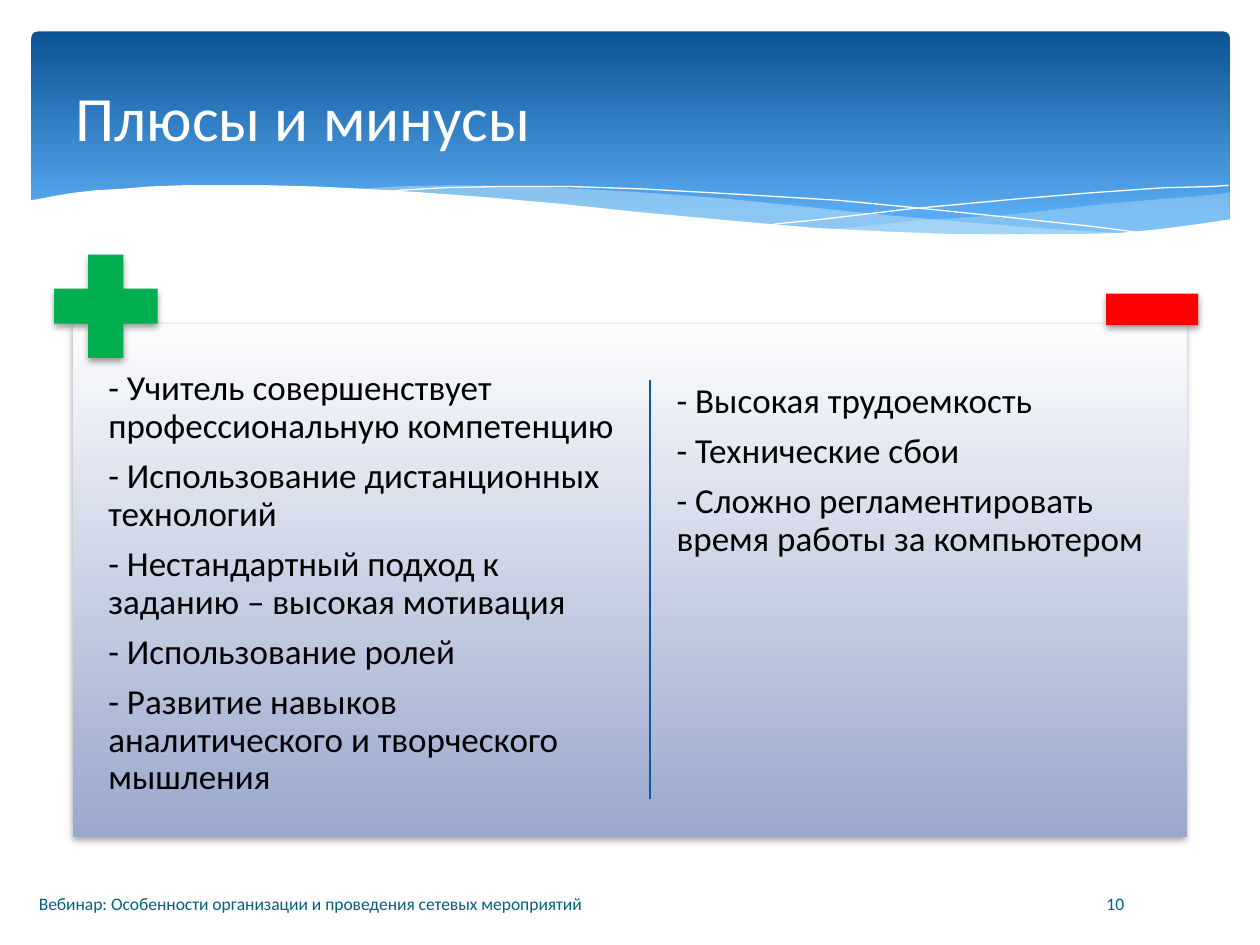
from dataclasses import dataclass

from lxml.etree import SubElement
from pptx import Presentation
from pptx.dml.color import RGBColor
from pptx.enum.shapes import MSO_CONNECTOR, MSO_SHAPE
from pptx.enum.text import MSO_ANCHOR, PP_ALIGN
from pptx.oxml.ns import qn
from pptx.util import Inches, Pt

CELL = Inches(0.01)
COLUMNS, ROWS = 1000, 750
FONT = "Calibri"

RIGHT_SWELL = [
    (950, 128), (923, 131), (896, 133), (851, 137), (780, 145), (704, 150),
    (636, 157), (680, 159), (732, 161), (786, 162), (840, 162), (886, 160),
    (928, 156), (951, 149), (951, 128),
]
LONG_SWELL = [
    (868, 160), (812, 157), (750, 152), (681, 146), (604, 138), (544, 132),
    (489, 128), (440, 125), (395, 123), (336, 122), (288, 123), (261, 125),
    (317, 128), (379, 134), (424, 138), (505, 146), (576, 153), (640, 157),
    (697, 160), (748, 162), (793, 163), (843, 162),
]
FALLING_CREST = [
    (284, 127), (293, 126), (328, 124), (376, 123), (425, 123), (485, 125),
    (557, 129), (640, 134), (702, 140), (770, 147), (844, 155), (882, 160),
]
RISING_CREST = [
    (588, 153), (628, 149), (695, 141), (781, 133), (841, 128), (899, 124),
    (938, 123), (950, 122),
]
WHITE_WAVE = [
    (952, 149), (925, 153), (895, 157), (862, 160), (825, 161), (784, 162),
    (736, 161), (683, 159), (623, 156), (554, 150), (478, 143), (422, 137),
    (366, 132), (315, 128), (267, 125), (225, 123), (186, 122), (152, 122),
    (121, 122), (94, 123), (70, 125), (51, 126), (34, 128), (21, 130),
    (11, 132), (0, 134), (-2, 134), (-2, 185), (952, 185),
]
PLUSES = [
    "- Учитель совершенствует профессиональную компетенцию",
    "- Использование дистанционных технологий",
    "- Нестандартный подход к заданию – высокая мотивация",
    "- Использование ролей",
    "- Развитие навыков аналитического и творческого мышления",
]
MINUSES = [
    "- Высокая трудоемкость",
    "- Технические сбои",
    "- Сложно регламентировать время работы за компьютером",
]


@dataclass
class Box:
    left: float
    top: float
    width: float
    height: float

    def inner(self, left, top, width, height):
        return Box(self.left + left, self.top + top, width, height)

    def point(self, column, row):
        return int((self.left + column) * CELL), int((self.top + row) * CELL)

    def frame(self):
        return *self.point(0, 0), int(self.width * CELL), int(self.height * CELL)


def color(value):
    return RGBColor.from_string(value)


def paint(shape, value, opacity=100):
    shape.fill.solid()
    shape.fill.fore_color.rgb = color(value)
    if opacity < 100:
        fill_color = shape._element.spPr.find(qn("a:solidFill"))[0]
        SubElement(fill_color, qn("a:alpha"), val=str(opacity * 1000))


def paint_gradient(shape, first, last, end=1.0):
    shape.fill.gradient()
    shape.fill.gradient_angle = 270
    for stop, value, position in zip(shape.fill.gradient_stops, (first, last), (0, end)):
        stop.color.rgb = color(value)
        stop.position = position


def add_plain_shape(slide, kind, box):
    shape = slide.shapes.add_shape(kind, *box.frame())
    shape.shadow.inherit = False
    shape.line.fill.background()
    return shape


def add_shadow(shape):
    effects = shape._element.spPr.find(qn("a:effectLst"))
    shadow = SubElement(
        effects, qn("a:outerShdw"), blurRad=str(Pt(4)), dist=str(Pt(2)),
        dir="5400000", rotWithShape="0",
    )
    shadow_color = SubElement(shadow, qn("a:srgbClr"), val="000000")
    SubElement(shadow_color, qn("a:alpha"), val="38000")


def add_wave(slide, box, points, closed=True):
    start, *others = [box.point(*point) for point in points]
    builder = slide.shapes.build_freeform(*start)
    builder.add_line_segments(others, close=closed)
    wave = builder.convert_to_shape()
    wave.shadow.inherit = False
    wave.line.fill.background()
    return wave


def add_text(slide, box, lines, size, value, anchor=MSO_ANCHOR.TOP,
             alignment=PP_ALIGN.LEFT, inset=None, line_spacing=None, space_after=None):
    frame = slide.shapes.add_textbox(*box.frame()).text_frame
    frame.word_wrap = True
    frame.vertical_anchor = anchor
    if inset is not None:
        frame.margin_left = frame.margin_right = inset
        frame.margin_top = frame.margin_bottom = inset
    for index, line in enumerate(lines):
        paragraph = frame.add_paragraph() if index else frame.paragraphs[0]
        paragraph.alignment = alignment
        paragraph.line_spacing = line_spacing
        paragraph.space_after = space_after
        run = paragraph.add_run()
        run.text = line
        run.font.name = FONT
        run.font.size = Pt(size)
        run.font.color.rgb = color(value)


def add_banner(slide, box):
    banner = add_plain_shape(slide, MSO_SHAPE.ROUNDED_RECTANGLE, box)
    banner.adjustments[0] = 0.03
    paint_gradient(banner, "0B5394", "59AAF2", 0.9)
    for points, opacity in ((RIGHT_SWELL, 29), (LONG_SWELL, 40)):
        paint(add_wave(slide, box, points), "DBF5F9", opacity)
    for points in (FALLING_CREST, RISING_CREST):
        crest = add_wave(slide, box, points, closed=False)
        crest.fill.background()
        crest.line.fill.solid()
        crest.line.color.rgb = color("FFFFFF")
        crest.line.width = Pt(0)
    paint(add_wave(slide, box, WHITE_WAVE), "FFFFFF")
    add_text(slide, box.inner(25, 12, 900, 110), ["Плюсы и минусы"], 36, "FFFFFF",
             MSO_ANCHOR.MIDDLE)


def add_comparison(slide, box):
    panel = add_plain_shape(slide, MSO_SHAPE.RECTANGLE, box)
    paint_gradient(panel, "FCFDFE", "99A8CC")
    add_shadow(panel)

    for column, lines in (
        (box.inner(24, 33, 427, 368), PLUSES),
        (box.inner(475, 43, 390, 348), MINUSES),
    ):
        add_text(slide, column, lines, 20, "000000", inset=Inches(0.04),
                 line_spacing=0.9, space_after=Pt(7))

    plus = add_plain_shape(slide, MSO_SHAPE.CROSS, box.inner(-15, -55, 82, 82))
    plus.adjustments[0] = 0.33
    minus = add_plain_shape(slide, MSO_SHAPE.RECTANGLE, box.inner(820, -24, 73, 25))
    for sign, value in ((plus, "00B050"), (minus, "FF0000")):
        paint(sign, value)
        add_shadow(sign)

    divider = slide.shapes.add_connector(
        MSO_CONNECTOR.STRAIGHT, *box.point(458, 45), *box.point(458, 377))
    divider.line.color.rgb = color("0C599F")
    divider.line.width = Pt(1.25)
    SubElement(divider._element.spPr, qn("a:effectLst"))


def add_footer(slide, box):
    add_text(slide, box.inner(0, 0, 794, box.height),
             ["Вебинар: Особенности организации и проведения сетевых мероприятий"],
             10, "04617B", MSO_ANCHOR.BOTTOM)
    add_text(slide, box.inner(801, 0, 80, box.height), ["10"], 10, "04617B",
             MSO_ANCHOR.BOTTOM, PP_ALIGN.RIGHT)


def main():
    presentation = Presentation()
    presentation.slide_width = COLUMNS * CELL
    presentation.slide_height = ROWS * CELL
    slide = presentation.slides.add_slide(presentation.slide_layouts[6])
    add_banner(slide, Box(25, 25, 951, 161))
    add_comparison(slide, Box(58, 257, 884, 407))
    add_footer(slide, Box(21, 690, 881, 40))
    presentation.save("out.pptx")


if __name__ == "__main__":
    main()
